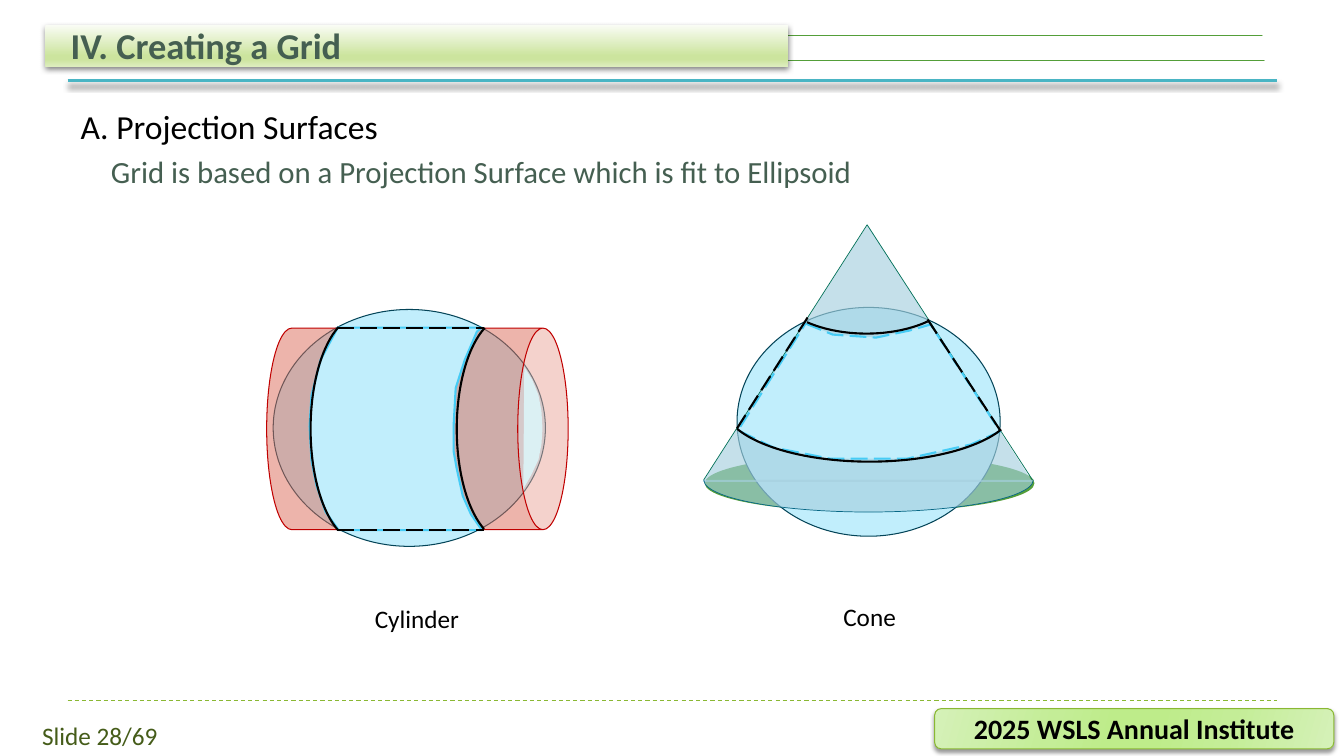
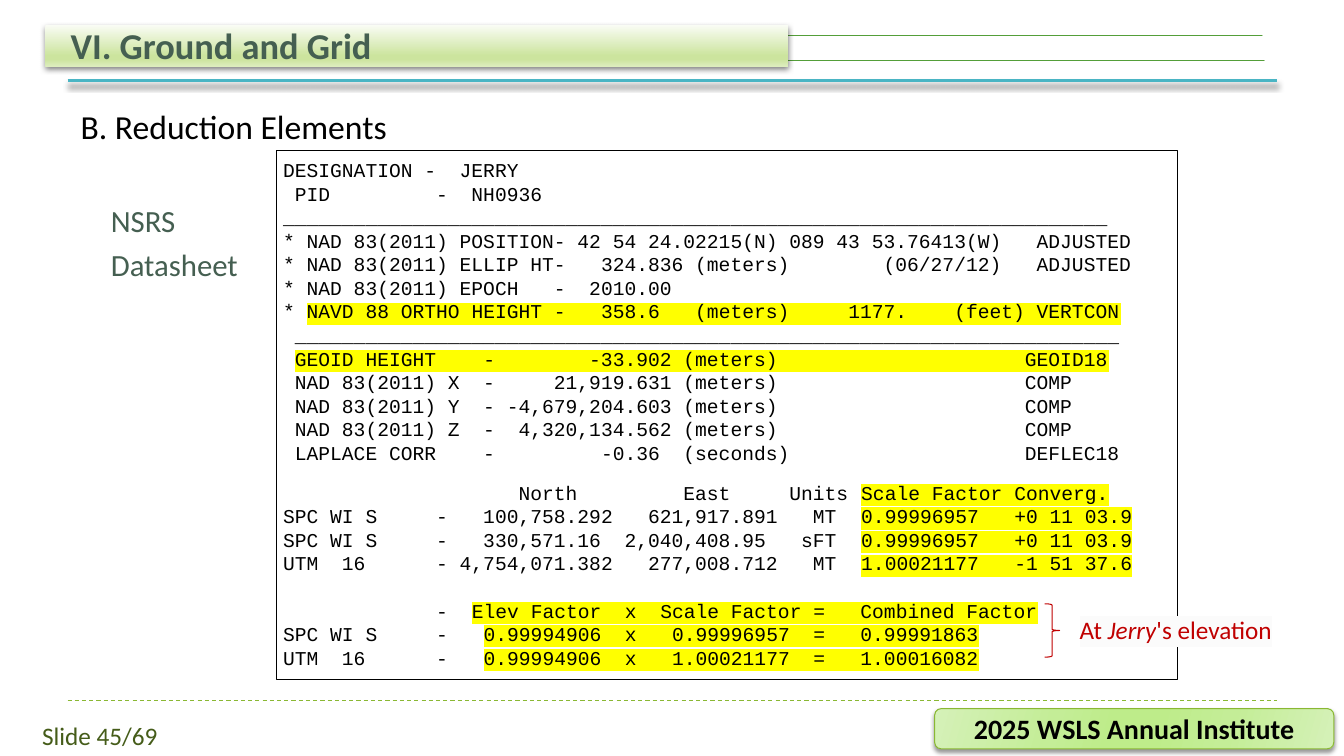
from lxml import etree
from pptx import Presentation
from pptx.dml.color import RGBColor
from pptx.enum.dml import MSO_LINE
from pptx.enum.shapes import MSO_CONNECTOR, MSO_SHAPE
from pptx.enum.text import MSO_ANCHOR, MSO_AUTO_SIZE, PP_ALIGN
from pptx.oxml.ns import qn
from pptx.util import Pt

PX = 9144
SANS, MONO = "Calibri", "Courier New"

RECT, ROUND = MSO_SHAPE.RECTANGLE, MSO_SHAPE.ROUNDED_RECTANGLE
OVAL, ARC, CAN = MSO_SHAPE.OVAL, MSO_SHAPE.ARC, MSO_SHAPE.CAN
PEAK, BRACE = MSO_SHAPE.ISOSCELES_TRIANGLE, MSO_SHAPE.RIGHT_BRACE
STRAIGHT = MSO_CONNECTOR.STRAIGHT
DASH, LONG = MSO_LINE.DASH, MSO_LINE.LONG_DASH
LEFT, CENTER = PP_ALIGN.LEFT, PP_ALIGN.CENTER
TOP, MIDDLE, BOTTOM = MSO_ANCHOR.TOP, MSO_ANCHOR.MIDDLE, MSO_ANCHOR.BOTTOM
FIXED = MSO_AUTO_SIZE.NONE

BLACK = RGBColor(0x00, 0x00, 0x00)
WHITE = RGBColor(0xFF, 0xFF, 0xFF)
SLATE = RGBColor(0x45, 0x5F, 0x51)
OLIVE = RGBColor(0x45, 0x5C, 0x19)
LIME = RGBColor(0x8A, 0xB8, 0x33)
GREEN = RGBColor(0x54, 0x9E, 0x39)
TEAL = RGBColor(0x4A, 0xB5, 0xC4)
RED = RGBColor(0xC0, 0x00, 0x00)
ROSE = RGBColor(0xDC, 0x6B, 0x58)
SKY = RGBColor(0xC1, 0xEE, 0xFC)
CYAN = RGBColor(0x46, 0xCC, 0xF6)
NAVY = RGBColor(0x04, 0x44, 0x58)
STEEL = RGBColor(0xA6, 0xD0, 0xDF)
OCEAN = RGBColor(0x07, 0x67, 0x85)
PINE = RGBColor(0x01, 0x70, 0x58)
GLASS = RGBColor(0xDB, 0xF0, 0xF3)
YELLOW = RGBColor(0xFF, 0xFF, 0x00)
PAPER = RGBColor(0xFB, 0xFB, 0xFB)
MINT = RGBColor(0xD5, 0xF1, 0xB8)
LEAF = RGBColor(0xC4, 0xED, 0x97)
GRASS = RGBColor(0xBE, 0xEC, 0x8A)
CREAM = RGBColor(0xF9, 0xFC, 0xF4)
MOSS = RGBColor(0xCC, 0xE4, 0x9E)
FERN = RGBColor(0xDD, 0xED, 0xBE)

BADGE = ((0, MINT), (30, LEAF), (45, GRASS), (55, GRASS), (73, LEAF), (100, MINT))
BAND = ((0, CREAM), (74, MOSS), (83, MOSS), (100, FERN))


def node(root, tag, **attrs):
    """Add a drawing element with the given attributes."""
    return etree.SubElement(root, qn("a:" + tag), {k: str(v) for k, v in attrs.items()})


def write(para, text, size=18, color=BLACK, font=SANS, bold=False, italic=False, mark=None):
    """Add one formatted run to a paragraph."""
    run = para.add_run()
    run.text = text
    style = run.font
    style.size, style.bold, style.italic = Pt(size), bold, italic
    style.color.rgb = color
    if mark is not None:
        node(node(run.font._element, "highlight"), "srgbClr", val=mark)
    style.name = font


class Deck:
    """Hold the shared style and the slide being drawn."""

    def __init__(self):
        """Start a wide presentation."""
        self.prs = Presentation()
        self.prs.slide_width, self.prs.slide_height = 1333 * PX, 750 * PX
        self.plan = self.prs.slide_layouts[1]
        self.slide = None

    def page(self, title, items, label):
        """Open a slide with its title, list and number."""
        self.slide = self.prs.slides.add_slide(self.plan)
        if len(self.prs.slides) == 1:
            self.frame()
        head, body = self.slide.placeholders
        frame = self.place(head, 60, 20, 1200, 51, BOTTOM)
        frame.paragraphs[0].alignment = LEFT
        write(frame.paragraphs[0], title, size=26, color=SLATE, bold=True)
        frame = self.place(body, 70, 100, 1200, 590, TOP)
        for num, (text, level, gap) in enumerate(items):
            para = frame.add_paragraph() if num else frame.paragraphs[0]
            para.level = level
            props = para._p.get_or_add_pPr()
            props.set("marL", str(30 * (level + 1) * PX))
            props.set("indent", str(-30 * PX))
            node(props, "buNone")
            para.space_before = Pt(gap)
            write(para, text, size=22 if level else 24, color=SLATE if level else BLACK)
        self.text(label, 7, 710, 184, 40, color=OLIVE)

    def place(self, item, left, top, wide, high, anchor):
        """Move a text holder and give back its frame."""
        item.left, item.top = left * PX, top * PX
        item.width, item.height = wide * PX, high * PX
        frame = item.text_frame
        frame.word_wrap, frame.auto_size = True, FIXED
        frame.vertical_anchor = anchor
        return frame

    def frame(self):
        """Draw the bands, rules and badge once, on the layout."""
        parts = [
            self.line(67, 695, 1267, 695, LIME, 0.75, DASH),
            self.cast(self.line(67, 80, 1267, 80, TEAL, 2), 40, 4, 3.4),
        ]
        parts += [self.line(x, y, x + 1175, y, GREEN) for x in (73, 104) for y in (35, 60)]
        badge = self.shape(ROUND, 927, 703, 396, 40, line=LIME)
        self.blend(badge, BADGE, 344)
        para = self.place(badge, 927, 703, 396, 40, MIDDLE).paragraphs[0]
        para.alignment = CENTER
        write(para, "2025 WSLS Annual Institute", size=20, bold=True)
        band = self.shape(RECT, 45, 25, 737, 41)
        self.blend(band, BAND, 270)
        parts += [self.cast(badge, 40, 3, 2), self.cast(band, 50, 4, 2)]
        parts.append(self.shape(OVAL, 1251, 5, 79, 79, fill=WHITE))
        for num, part in enumerate(parts):
            part.element.xpath(".//p:cNvPr")[0].set("id", str(20 + num))
            self.plan.shapes.element.append(part.element)

    def blend(self, item, stops, angle):
        """Fill a shape with a gradient of many stops."""
        item.fill.gradient()
        item.fill.gradient_angle = angle
        track = item.element.spPr.find(qn("a:gradFill")).find(qn("a:gsLst"))
        for stop in list(track):
            track.remove(stop)
        for spot, color in stops:
            node(node(track, "gs", pos=spot * 1000), "srgbClr", val=color)

    def cast(self, item, alpha, blur, gap):
        """Drop a black shadow straight down."""
        root = item.element.spPr.find(qn("a:effectLst"))
        shade = node(root, "outerShdw", blurRad=int(Pt(blur)), dist=int(Pt(gap)),
                     dir=5400000, algn="ctr", rotWithShape=0)
        node(node(shade, "srgbClr", val=BLACK), "alpha", val=alpha * 1000)
        return item

    def ink(self, item, color, width, dash):
        """Set colour, width and dash of an outline."""
        item.line.color.rgb = color
        item.line.width = Pt(width)
        if dash is not None:
            item.line.dash_style = dash

    def dress(self, item, fill=None, alpha=100, line=None, width=0.75, dash=None):
        """Give a shape its fill and outline, with no shadow."""
        if fill is None:
            item.fill.background()
        else:
            item.fill.solid()
            item.fill.fore_color.rgb = fill
            if alpha < 100:
                tint = item.element.spPr.find(qn("a:solidFill"))[0]
                node(tint, "alpha", val=alpha * 1000)
        if line is None:
            item.line.fill.background()
        else:
            self.ink(item, line, width, dash)
        item.shadow.inherit = False
        return item

    def shape(self, kind, left, top, wide, high, turn=0, ends=(), **look):
        """Draw a preset shape."""
        item = self.slide.shapes.add_shape(kind, left * PX, top * PX, wide * PX, high * PX)
        item.rotation = turn
        for num, end in enumerate(ends):
            item.adjustments[num] = end
        return self.dress(item, **look)

    def line(self, x1, y1, x2, y2, color, width=0.75, dash=None):
        """Draw a straight line."""
        item = self.slide.shapes.add_connector(STRAIGHT, x1 * PX, y1 * PX, x2 * PX, y2 * PX)
        self.ink(item, color, width, dash)
        node(item.element.spPr, "effectLst")
        return item

    def free(self, points, **look):
        """Draw a closed outline through points."""
        path = self.slide.shapes.build_freeform(*points[0], scale=PX)
        path.add_line_segments(points[1:], close=True)
        return self.dress(path.convert_to_shape(), **look)

    def text(self, text, left, top, wide, high, **style):
        """Write one centred line in a box."""
        para = self.box(left, top, wide, high).paragraphs[0]
        para.alignment = CENTER
        write(para, text, **style)

    def box(self, left, top, wide, high):
        """Add an empty text box and give back its frame."""
        item = self.slide.shapes.add_textbox(0, 0, PX, PX)
        return self.place(item, left, top, wide, high, TOP)

    def code(self, rows, left, top, wide, high, gaps=()):
        """Write plain and marked code, with a free line before some rows."""
        frame = self.box(left, top, wide, high)
        for num, (plain, *marked) in enumerate(rows):
            para = frame.add_paragraph() if num else frame.paragraphs[0]
            para.line_spacing = Pt(16.8)
            para.space_before = Pt(16.8 if num in gaps else 0)
            write(para, plain, size=14, font=MONO)
            for part in marked:
                write(para, part, size=14, font=MONO, mark=YELLOW)


def cone(deck):
    """Draw a cone cutting a globe."""
    deck.shape(OVAL, 699, 451, 327, 57, fill=GREEN)
    deck.shape(OVAL, 731, 305, 261, 227, fill=SKY, line=NAVY)
    deck.shape(PEAK, 697, 223, 327, 255, fill=STEEL, alpha=65)
    deck.shape(ARC, 698, 444, 327, 64, ends=(216, 107.98), fill=STEEL, alpha=65,
               line=OCEAN, width=0.5)
    for foot in (698, 1024):
        deck.line(foot, 476, 860, 223, PINE, 0.5)
    deck.free([(799, 321), (826, 332), (869, 335), (902, 328), (923, 322), (992, 428),
               (963, 441), (900, 455), (823, 455), (767, 444), (732, 427)],
              fill=SKY, line=CYAN, width=1.5, dash=LONG)
    deck.line(801, 315, 731, 425, BLACK, 1.5, LONG)
    deck.line(920, 317, 992, 427, BLACK, 1.5, LONG)
    deck.shape(ARC, 717, 344, 291, 114, ends=(6.56, 101.7), line=BLACK, width=1.5)
    deck.shape(ARC, 768, 235, 183, 96, ends=(18.4, 88.88), line=BLACK, width=1.5)


def tube(deck):
    """Draw a cylinder cutting a globe."""
    deck.shape(OVAL, 271, 307, 270, 235, fill=SKY, line=NAVY)
    deck.shape(CAN, 314, 276, 200, 299, turn=90, fill=ROSE, alpha=50, line=RED)
    deck.free([(520, 364), (528, 377), (534, 392), (537, 408), (538, 425),
               (537, 441), (534, 456), (527, 471), (519, 485)], fill=GLASS)
    deck.free([(335, 325), (318, 357), (309, 392), (307, 423), (309, 457), (314, 482),
               (323, 508), (336, 526), (478, 526), (467, 510), (459, 492), (453, 465),
               (450, 448), (450, 421), (452, 385), (461, 357), (473, 329), (478, 325)],
              fill=SKY, line=CYAN, width=1.5)
    for left, wide in ((245, 225), (391, 223)):
        deck.shape(ARC, left, 376, wide, 99, turn=90, ends=(7.65, 100.65),
                   line=BLACK, width=1.5)
    for y in (325, 526):
        deck.line(334, y, 480, y, BLACK, 1.5, LONG)


def main():
    """Build both slides and save them."""
    deck = Deck()
    deck.page("IV. Creating a Grid", [
        ("A. Projection Surfaces", 0, 0),
        ("Grid is based on a Projection Surface which is fit to Ellipsoid", 1, 5),
    ], "Slide 28/69")
    deck.text("Cone", 706, 592, 313, 40)
    deck.text("Cylinder", 287, 594, 253, 40)
    cone(deck)
    tube(deck)

    deck.page("VI. Ground and Grid", [
        ("B. Reduction Elements", 0, 0), ("NSRS", 1, 40), ("Datasheet", 1, 5),
    ], "Slide 45/69")
    deck.shape(RECT, 274, 149, 894, 525, fill=WHITE, line=BLACK, width=0.25)
    rule = "_" * 70
    deck.code([
        ("DESIGNATION -  JERRY",),
        (" PID         -  NH0936",),
        (rule,),
        ("* NAD 83(2011) POSITION- 42 54 24.02215(N) 089 43 53.76413(W)   ADJUSTED",),
        ("* NAD 83(2011) ELLIP HT-   324.836 (meters)        (06/27/12)   ADJUSTED",),
        ("* NAD 83(2011) EPOCH   -  2010.00",),
        ("* ", "NAVD 88 ORTHO HEIGHT -   358.6   (meters)     1177.    (feet) VERTCON"),
        (" " + rule,),
        (" ", "GEOID HEIGHT    -        -33.902 (meters)                     GEOID18"),
        (" NAD 83(2011) X  -     21,919.631 (meters)                     COMP",),
        (" NAD 83(2011) Y  - -4,679,204.603 (meters)                     COMP",),
        (" NAD 83(2011) Z  -  4,320,134.562 (meters)                     COMP",),
        (" LAPLACE CORR    -         -0.36  (seconds)                    DEFLEC18",),
    ], 271, 152, 900, 316)
    deck.code([
        ("                    North         East     Units ", "Scale Factor Converg."),
        ("SPC WI S     -   100,758.292   621,917.891   MT  ", "0.99996957   +0 11 03.9"),
        ("SPC WI S     -   330,571.16  2,040,408.95   sFT  ", "0.99996957   +0 11 03.9"),
        ("UTM  16      - 4,754,071.382   277,008.712   MT  ", "1.00021177   -1 51 37.6"),
        ("             -  ", "Elev Factor  x  Scale Factor =   Combined Factor"),
        ("SPC WI S     -   ", "0.99994906  x   0.99996957  =   0.99991863"),
        ("UTM  16      -   ", "0.99994906  x   1.00021177  =   1.00016082"),
    ], 271, 472, 900, 199, gaps=(4,))
    para = deck.box(1061, 605, 214, 40).paragraphs[0]
    for part, slant in (("At ", False), ("Jerry", True), ("'s elevation", False)):
        write(para, part, color=RED, italic=slant, mark=PAPER)
    deck.shape(BRACE, 1036, 599, 15, 53, line=RED)
    deck.prs.save("out.pptx")


if __name__ == "__main__":
    main()
